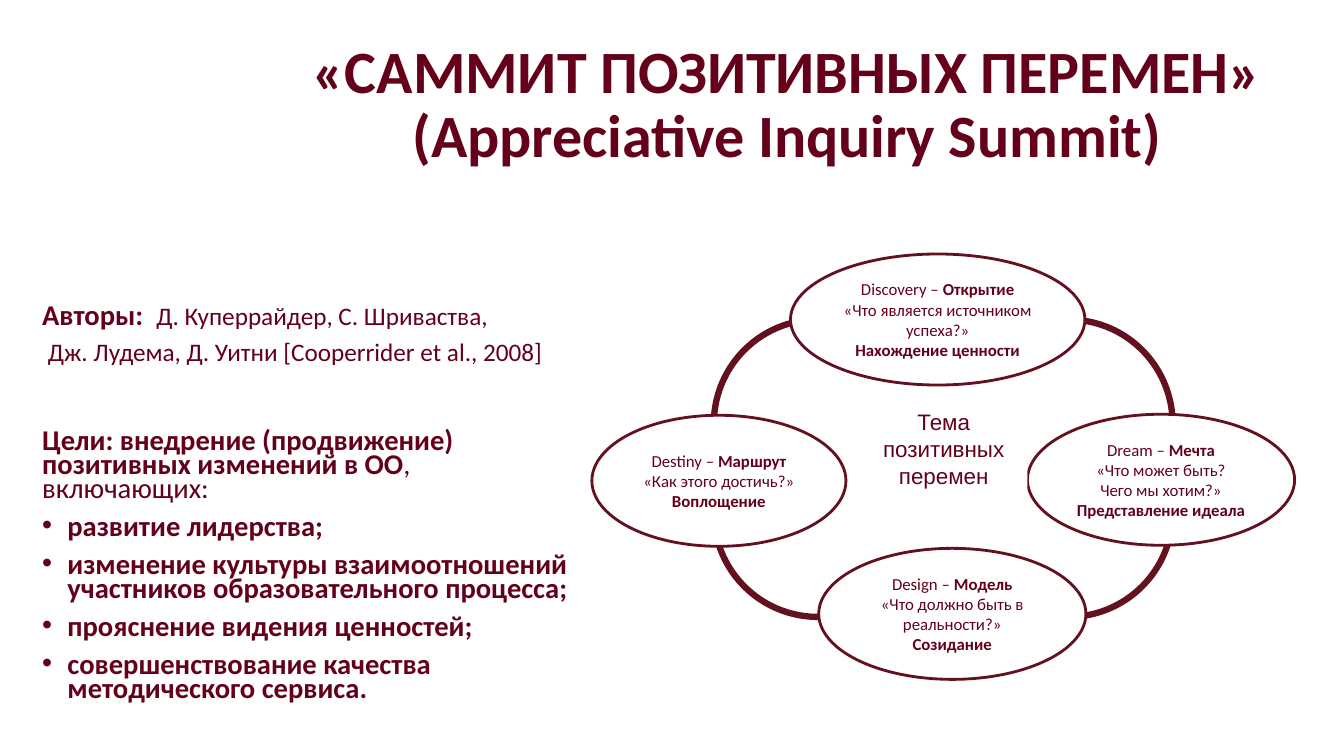
"""Build the slide on the four stages of the positive change summit."""
from lxml import etree
from pptx import Presentation, util as u
from pptx.dml.color import RGBColor
from pptx.enum import shapes, text
from pptx.oxml.ns import qn

INK, EDGE, PAPER = "64001A", "63101F", "FFFFFF"
WIDE, HIGH = 13.33, 7.5
OVAL = 17.33

TITLE = "«САММИТ ПОЗИТИВНЫХ ПЕРЕМЕН» (Appreciative Inquiry Summit)"
THEME = "Тема позитивных перемен"
AUTHORS = [
    [("Авторы:  ", 20.4, True), ("Д. Куперрайдер, С. Шриваства,", 18, False)],
    [(" Дж. Лудема, Д. Уитни [Cooperrider et al., 2008]", 18, False)],
]
AIM = [("Цели: внедрение (продвижение) позитивных изменений в ОО", 20.4, True),
       (", включающих:", 20.4, False)]
GOALS = [
    "развитие лидерства;",
    "изменение культуры взаимоотношений участников образовательного процесса;",
    "прояснение видения ценностей;",
    "совершенствование качества методического сервиса.",
]
STAGES = [
    ((44.04, 54.93, 18.9), "Destiny", "Маршрут",
     ["«Как этого достичь?»"], "Воплощение"),
    ((58.81, 33.6, 21.91), "Discovery", "Открытие",
     ["«Что является источником успеха?»"], "Нахождение ценности"),
    ((76.44, 54.8, 19.88), "Dream", "Мечта",
     ["«Что может быть?", "Чего мы хотим?»"], "Представление идеала"),
    ((60.92, 72.53, 19.88), "Design", "Модель",
     ["«Что должно быть в реальности?»"], "Созидание"),
]


def color(code):
    return RGBColor.from_string(code)


def place(left, top, width, height):
    """Turn percent shares of the slide into lengths."""
    return [u.Inches(round(part * side / 100, 2)) for part, side in
            zip((left, top, width, height), (WIDE, HIGH, WIDE, HIGH))]


def draw(slide, kind, box, fill=None, line=None):
    shape = slide.shapes.add_shape(kind, *place(*box))
    shape.shadow.inherit = False
    if fill:
        shape.fill.solid()
        shape.fill.fore_color.rgb = color(fill)
    else:
        shape.fill.background()
    if line:
        shape.line.color.rgb = color(EDGE)
        shape.line.width = u.Pt(line)
    else:
        shape.line.fill.background()
    return shape


def write(shape, paras, font="Calibri", align=text.PP_ALIGN.CENTER,
          anchor=text.MSO_ANCHOR.TOP):
    """Fill a shape with paragraphs of (words, size, bold) runs."""
    frame = shape.text_frame
    frame.word_wrap = True
    frame.vertical_anchor = anchor
    for i, runs in enumerate(paras):
        para = frame.add_paragraph() if i else frame.paragraphs[0]
        para.alignment = align
        for words, size, bold in runs:
            run = para.add_run()
            run.text = words
            run.font.name = font
            run.font.size = u.Pt(size)
            run.font.bold = bold
            run.font.color.rgb = color(INK)
    return frame.paragraphs


def bullet(para):
    props = para._p.get_or_add_pPr()
    props.set("marL", str(u.Inches(0.25)))
    props.set("indent", str(-u.Inches(0.25)))
    etree.SubElement(props, qn("a:buFont")).set("typeface", "Arial")
    etree.SubElement(props, qn("a:buChar")).set("char", "•")


def cycle(slide):
    kind = shapes.MSO_SHAPE
    ring = draw(slide, kind.ROUNDED_RECTANGLE, (53.11, 42.27, 34.13, 39.33), line=4.5)
    ring.adjustments[0] = 0.35
    for (left, top, width), name, label, asks, result in STAGES:
        oval = draw(slide, kind.OVAL, (left, top, width, OVAL), PAPER, 2)
        paras = [[(name + " – ", 12, False), (label, 12, True)]]
        paras += [[(ask, 12, False)] for ask in asks]
        write(oval, paras + [[(result, 12, True)]], anchor=text.MSO_ANCHOR.MIDDLE)
    core = draw(slide, kind.RECTANGLE, (63.99, 53.33, 12.45, 14.13), PAPER)
    write(core, [[(THEME, 16, False)]], font="Arial")


def words(slide):
    head = slide.shapes.add_textbox(*place(19.8, 4.8, 77.49, 19.87))
    write(head, [[(TITLE, 42.9, True)]])[0].line_spacing = 0.9
    body = slide.shapes.add_textbox(*place(2.4, 39.87, 40.59, 57.2))
    goals = [[(goal, 20.4, True)] for goal in GOALS]
    paras = write(body, AUTHORS + [AIM] + goals, align=text.PP_ALIGN.LEFT)
    aim = len(AUTHORS)
    for i, para in enumerate(paras):
        para.line_spacing = 0.7
        para.space_before = u.Pt(0 if i == 0 else 47 if i == aim else 10)
        if i > aim:
            bullet(para)


def main():
    deck = Presentation()
    deck.slide_width, deck.slide_height = u.Inches(WIDE), u.Inches(HIGH)
    slide = deck.slides.add_slide(deck.slide_layouts[6])
    cycle(slide)
    words(slide)
    deck.save("out.pptx")


if __name__ == "__main__":
    main()
